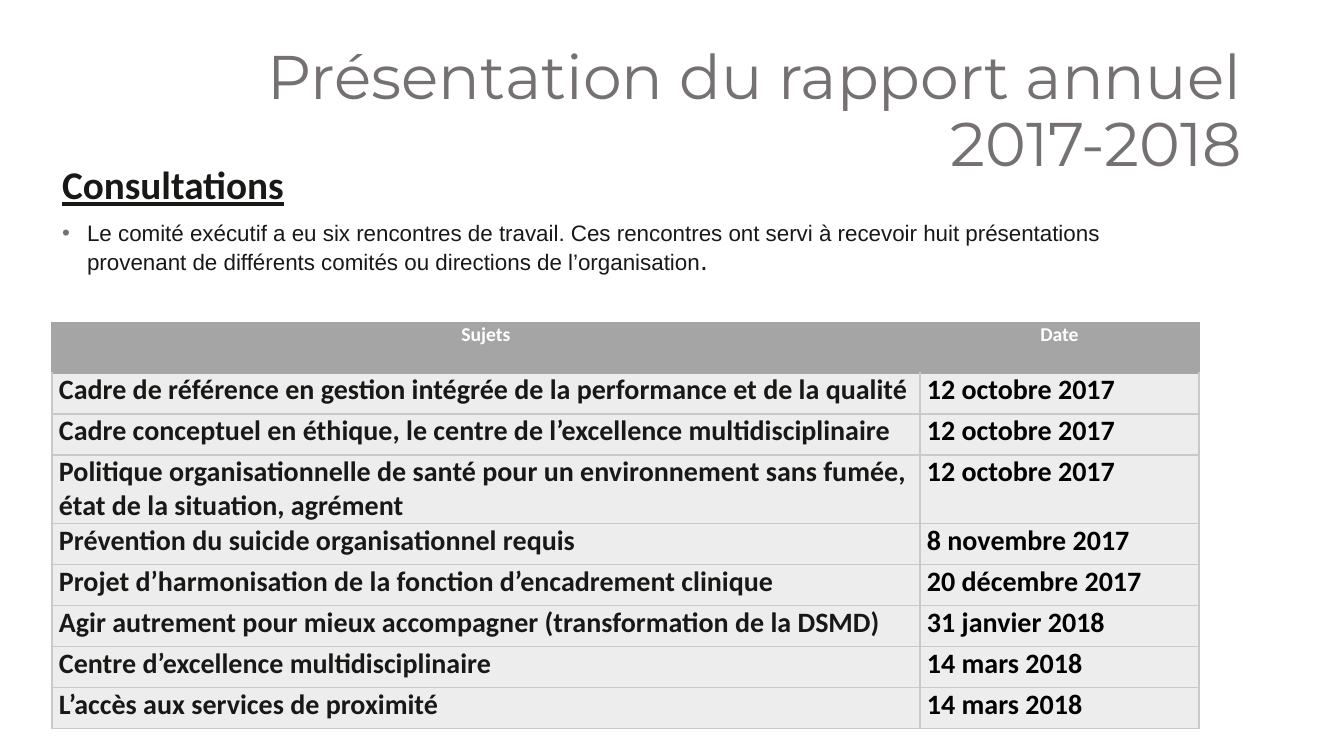
from lxml.etree import SubElement
from pptx import Presentation
from pptx.dml.color import RGBColor
from pptx.enum.text import MSO_ANCHOR as Anchor, MSO_AUTO_SIZE as AutoSize, PP_ALIGN as Align
from pptx.oxml.ns import qn
from pptx.util import Pt

EMU_PER_PX = 914400 / 100.8
HEADERS = ("Sujets", "Date")
CONSULTATIONS = (
    ("Cadre de référence en gestion intégrée de la performance et de la qualité", "12 octobre 2017"),
    ("Cadre conceptuel en éthique, le centre de l’excellence multidisciplinaire", "12 octobre 2017"),
    ("Politique organisationnelle de santé pour un environnement sans fumée, "
     "état de la situation, agrément", "12 octobre 2017"),
    ("Prévention du suicide organisationnel requis", "8 novembre 2017"),
    ("Projet d’harmonisation de la fonction d’encadrement clinique", "20 décembre 2017"),
    ("Agir autrement pour mieux accompagner (transformation de la DSMD)", "31 janvier 2018"),
    ("Centre d’excellence multidisciplinaire", "14 mars 2018"),
    ("L’accès aux services de proximité", "14 mars 2018"),
)


def px(length):
    return round(length * EMU_PER_PX)


def color(value):
    return RGBColor.from_string(value)


class ReportSlide:
    """Holds the style and the current slide, and adds each kind of element."""

    title_font, heading_font, body_font = "Montserrat", "Calibri", "Arial"
    gray, ink, black, white = "767171", "181817", "000000", "FFFFFF"
    header_fill, row_fill, grid = "A5A5A5", "EDEDED", "C9C9C9"

    def __init__(self, presentation):
        self.slide = presentation.slides.add_slide(presentation.slide_layouts[1])

    def place(self, shape, left, top, width, height, anchor):
        shape.left, shape.top = px(left), px(top)
        shape.width, shape.height = px(width), px(height)
        frame = shape.text_frame
        frame.word_wrap = True
        frame.auto_size = AutoSize.NONE
        frame.vertical_anchor = anchor
        return frame

    def run(self, paragraph, text, size, font, text_color, bold=False, underline=False):
        run = paragraph.add_run()
        run.text = text
        run.font.size = Pt(size)
        run.font.name = font
        run.font.bold = bold
        run.font.underline = underline
        run.font.color.rgb = color(text_color)

    def title(self, text, *box):
        paragraph = self.place(self.slide.shapes.title, *box, Anchor.MIDDLE).paragraphs[0]
        paragraph.alignment = Align.RIGHT
        paragraph.line_spacing = 0.9
        self.run(paragraph, text, 44, self.title_font, self.gray)

    def body(self, *box):
        return self.place(self.slide.placeholders[1], *box, Anchor.TOP)

    def heading(self, paragraph, text):
        properties = paragraph._p.get_or_add_pPr()
        properties.set("marL", "0")
        properties.set("indent", "0")
        SubElement(properties, qn("a:buNone"))
        paragraph.line_spacing = 0.9
        paragraph.space_before = Pt(0)
        self.run(paragraph, text, 28, self.heading_font, self.ink, True, True)

    def bullet(self, paragraph, *pieces):
        properties = paragraph._p.get_or_add_pPr()
        properties.set("marL", str(px(25)))
        properties.set("indent", str(px(-25)))
        bullet_color = SubElement(properties, qn("a:buClr"))
        SubElement(bullet_color, qn("a:srgbClr"), val=self.gray)
        SubElement(properties, qn("a:buFont"), typeface=self.body_font)
        SubElement(properties, qn("a:buChar"), char="•")
        paragraph.line_spacing = 0.9
        paragraph.space_before = Pt(10)
        for text, size in pieces:
            self.run(paragraph, text, size, self.body_font, self.ink)

    def cell(self, cell, text, size, text_color, fill, edges, alignment):
        cell.margin_left = cell.margin_right = px(7)
        cell.margin_top = cell.margin_bottom = 0
        properties = cell._tc.get_or_add_tcPr()
        for side, edge in zip("LRTB", edges):
            line = SubElement(properties, qn(f"a:ln{side}"), w=str(Pt(1)))
            line_fill = SubElement(line, qn("a:solidFill"))
            SubElement(line_fill, qn("a:srgbClr"), val=edge)
        cell.fill.solid()
        cell.fill.fore_color.rgb = color(fill)
        paragraph = cell.text_frame.paragraphs[0]
        paragraph.alignment = alignment
        self.run(paragraph, text, size, self.heading_font, text_color, True)

    def table(self, left, top, widths, heights):
        table = self.slide.shapes.add_table(
            len(heights), len(widths), px(left), px(top), px(sum(widths)), px(sum(heights))
        ).table
        table.horz_banding = False
        for column, width in zip(table.columns, widths):
            column.width = px(width)
        for row, height in zip(table.rows, heights):
            row.height = px(height)
        for index, header in enumerate(HEADERS):
            self.cell(table.cell(0, index), header, 14, self.white,
                      self.header_fill, [self.header_fill] * 4, Align.CENTER)
        for number, entry in enumerate(CONSULTATIONS, 1):
            top_edge = self.header_fill if number == 1 else self.grid
            edges = (self.grid, self.grid, top_edge, self.grid)
            for index, (text, text_color) in enumerate(zip(entry, (self.ink, self.black))):
                self.cell(table.cell(number, index), text, 20, text_color,
                          self.row_fill, edges, Align.LEFT)


def main():
    presentation = Presentation()
    presentation.slide_width, presentation.slide_height = px(1344), px(756)
    report = ReportSlide(presentation)
    report.title("Présentation du rapport annuel 2017-2018", 196, 40, 1056, 146)
    frame = report.body(52, 161, 1159, 435)
    report.heading(frame.paragraphs[0], "Consultations")
    report.bullet(
        frame.add_paragraph(),
        ("Le comité exécutif a eu six rencontres de travail. Ces rencontres ont servi à recevoir "
         "huit présentations provenant de différents comités ou directions de l’organisation", 16),
        (".", 20),
    )
    report.table(52, 323, (868, 279), (50, 41, 41, 66, 41, 41, 41, 41, 41))
    presentation.save("out.pptx")


if __name__ == "__main__":
    main()
